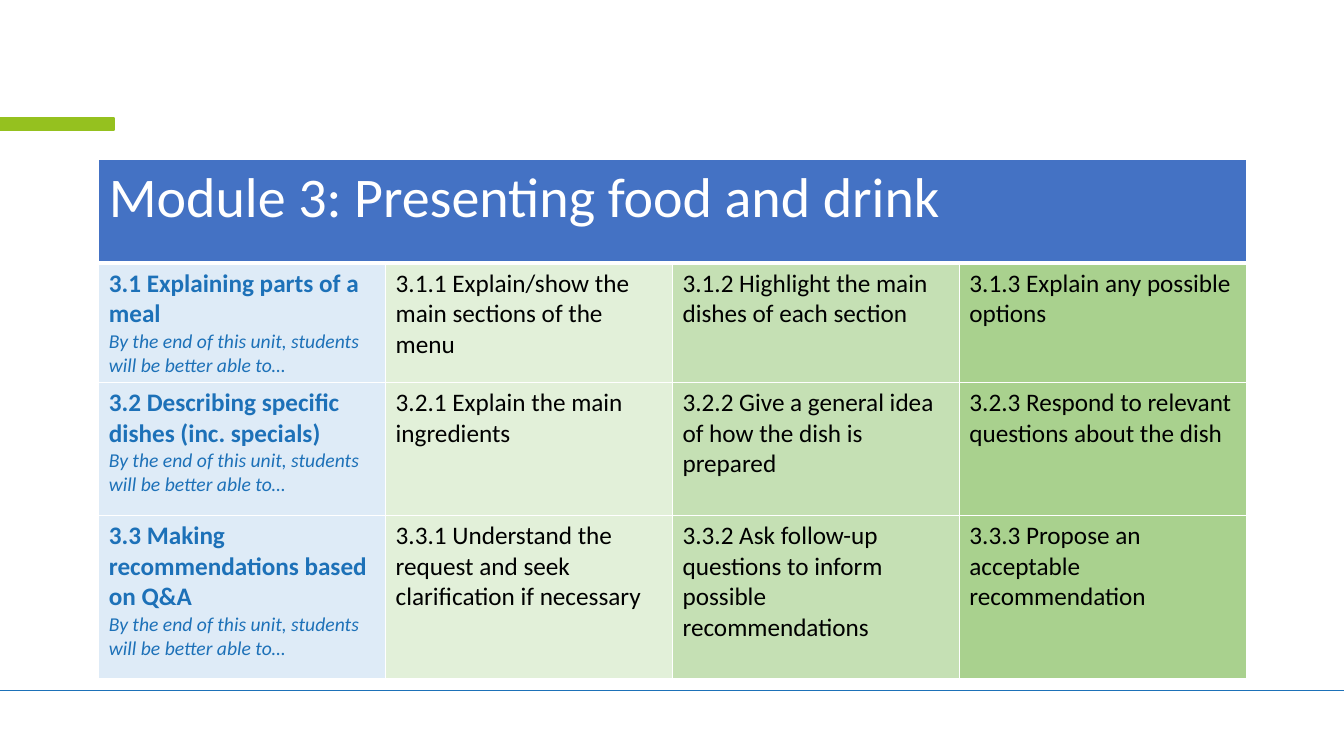
from lxml.etree import SubElement
from pptx import Presentation
from pptx.dml.color import RGBColor
from pptx.enum.shapes import MSO_CONNECTOR, MSO_SHAPE
from pptx.oxml.ns import qn
from pptx.util import Inches, Pt

# Content
HEADING = "Module 3: Presenting food and drink"
AIM = "By the end of this unit, students will be better able to…"
UNITS = [
    ("3.1 Explaining parts of a meal",
     "3.1.1 Explain/show the main sections of the menu",
     "3.1.2 Highlight the main dishes of each section",
     "3.1.3 Explain any possible options"),
    ("3.2 Describing specific dishes (inc. specials)",
     "3.2.1 Explain the main ingredients",
     "3.2.2 Give a general idea of how the dish is prepared",
     "3.2.3 Respond to relevant questions about the dish"),
    ("3.3 Making recommendations based on Q&A",
     "3.3.1 Understand the request and seek clarification if necessary",
     "3.3.2 Ask follow-up questions to inform possible recommendations",
     "3.3.3 Propose an acceptable recommendation"),
]

COLORS = {"white": "FFFFFF", "black": "000000", "header": "4472C4",
          "blue": "1D71B8", "accent": "95C11F"}
COLUMN_FILLS = ["DEEBF7", "E2F0D9", "C5E0B4", "A9D18E"]
FONT = "Calibri"

# Geometry in inches
WIDTH, HEIGHT = 13.33, 7.5
TABLE_LEFT, TABLE_TOP = 0.98, 1.58
COLUMN_WIDTH = 2.845
ROW_HEIGHTS = [1.03, 1.18, 1.32, 1.62]
RULE_Y = 6.85


def rgb(name):
    return RGBColor.from_string(COLORS.get(name, name))


def set_borders(cell, top, bottom):
    properties = cell._tc.get_or_add_tcPr()
    for side, points in (("L", 1), ("R", 1), ("T", top), ("B", bottom)):
        border = SubElement(properties, qn(f"a:ln{side}"), w=str(Pt(points)))
        fill = SubElement(border, qn("a:solidFill"))
        SubElement(fill, qn("a:srgbClr"), val=COLORS["white"])


def write(paragraph, text, size, color, bold=False, italic=False):
    paragraph.text = text
    font = paragraph.font
    font.name, font.size = FONT, Pt(size)
    font.bold, font.italic = bold, italic
    font.color.rgb = rgb(color)


def fill_cell(cell, color):
    cell.fill.solid()
    cell.fill.fore_color.rgb = rgb(color)


def add_decoration(slide):
    rule = slide.shapes.add_connector(
        MSO_CONNECTOR.STRAIGHT, 0, Inches(RULE_Y), Inches(WIDTH), Inches(RULE_Y))
    rule.line.color.rgb = rgb("blue")
    rule.line.width = Pt(1)
    SubElement(rule._element.spPr, qn("a:effectLst"))

    bar = slide.shapes.add_shape(
        MSO_SHAPE.RECTANGLE, 0, Inches(1.17), Inches(1.13), Inches(0.12))
    bar.shadow.inherit = False
    bar.fill.solid()
    bar.fill.fore_color.rgb = rgb("accent")
    bar.line.color.rgb = rgb("accent")
    bar.line.width = Pt(1)


def add_module_table(slide):
    columns = len(COLUMN_FILLS)
    table = slide.shapes.add_table(
        len(ROW_HEIGHTS), columns, Inches(TABLE_LEFT), Inches(TABLE_TOP),
        Inches(COLUMN_WIDTH * columns), Inches(sum(ROW_HEIGHTS))).table
    for column in table.columns:
        column.width = Inches(COLUMN_WIDTH)
    for row, height in zip(table.rows, ROW_HEIGHTS):
        row.height = Inches(height)

    # Heading across all columns
    for cell in table.rows[0].cells:
        set_borders(cell, top=1, bottom=3)
        fill_cell(cell, "header")
    heading = table.cell(0, 0)
    heading.merge(table.cell(0, columns - 1))
    write(heading.text_frame.paragraphs[0], HEADING, 40, "white")

    # Units with their objectives
    for row, texts in enumerate(UNITS, start=1):
        for column, (text, color) in enumerate(zip(texts, COLUMN_FILLS)):
            cell = table.cell(row, column)
            set_borders(cell, top=3 if row == 1 else 1, bottom=1)
            fill_cell(cell, color)
            is_unit = column == 0
            write(cell.text_frame.paragraphs[0], text, 18,
                  "blue" if is_unit else "black", bold=is_unit)
            if is_unit:
                write(cell.text_frame.add_paragraph(), AIM, 14, "blue", italic=True)


def main():
    presentation = Presentation()
    presentation.slide_width = Inches(WIDTH)
    presentation.slide_height = Inches(HEIGHT)
    slide = presentation.slides.add_slide(presentation.slide_layouts[6])
    add_decoration(slide)
    add_module_table(slide)
    presentation.save("out.pptx")


if __name__ == "__main__":
    main()
